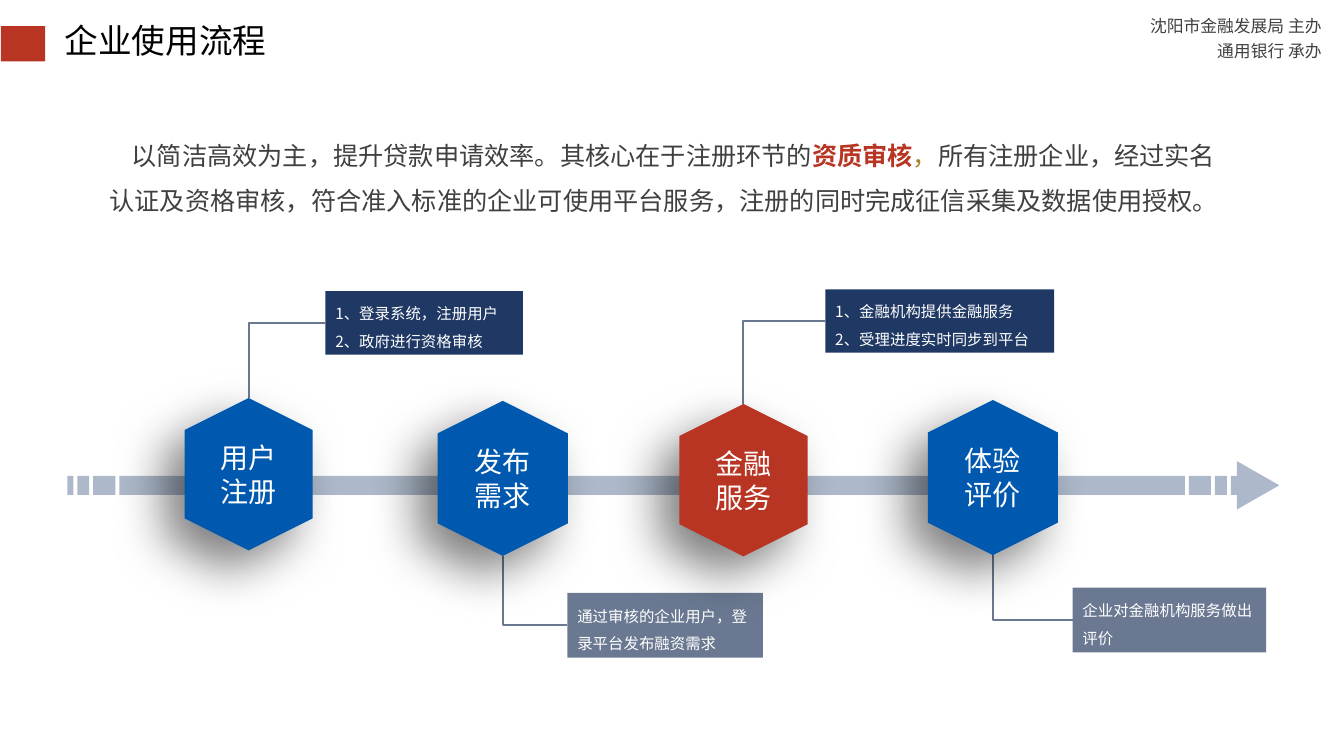
from dataclasses import dataclass

from lxml import etree
from pptx import Presentation
from pptx import util as u
from pptx.dml.color import RGBColor
from pptx.enum import shapes, text
from pptx.oxml.ns import qn


@dataclass(frozen=True)
class Theme:
    font: str = "Noto Sans CJK SC"
    red: str = "B83523"
    blue: str = "0059AF"
    navy: str = "1F3864"
    slate: str = "6A7991"
    pale: str = "ADB9CA"
    gold: str = "AC7E2B"
    ink: str = "404040"
    black: str = "000000"
    white: str = "FFFFFF"
    title: int = 24
    step: int = 20
    body: int = 18
    host: int = 12
    note: int = 11


@dataclass(frozen=True)
class Box:
    """A rectangle in centimetres."""
    left: float
    top: float
    width: float
    height: float

    def lengths(self):
        return [u.Cm(n) for n in (self.left, self.top, self.width, self.height)]

    def inner(self, left, top, width, height):
        return Box(self.left + left, self.top + top, width, height)

    @property
    def middle(self):
        return self.top + self.height / 2


THEME = Theme()
KINDS = shapes.MSO_SHAPE
ALIGN = text.PP_ALIGN
ANCHOR = text.MSO_ANCHOR


# Shared building parts
def add_block(parent, kind, box, color):
    shape = parent.shapes.add_shape(kind, *box.lengths())
    shape.shadow.inherit = False
    shape.fill.solid()
    shape.fill.fore_color.rgb = RGBColor.from_string(color)
    shape.line.fill.background()
    return shape


def style_para(para, size, color, align=ALIGN.LEFT, spacing=1.0):
    para.alignment = align
    para.line_spacing = spacing
    para.font.size = u.Pt(size)
    para.font.color.rgb = RGBColor.from_string(color)
    para.font.name = THEME.font
    latin = para._p.pPr.find(qn("a:defRPr")).find(qn("a:latin"))
    east_asian = etree.Element(qn("a:ea"), typeface=THEME.font)
    latin.addnext(east_asian)


def write(shape, lines, size, color, align=ALIGN.LEFT, spacing=1.0, anchor=ANCHOR.MIDDLE):
    frame = shape.text_frame
    frame.word_wrap = True
    frame.vertical_anchor = anchor
    for index, line in enumerate(lines):
        para = frame.add_paragraph() if index else frame.paragraphs[0]
        para.text = line
        style_para(para, size, color, align, spacing)
    return frame


# Title, red marker and hosts
def add_header(page, box):
    add_block(page, KINDS.RECTANGLE, box.inner(0.02, 0.66, 1.12, 0.89), THEME.red)
    title = page.shapes.add_textbox(*box.inner(1.63, 0.61, 6.43, 0.91).lengths())
    frame = write(title, ["企业使用流程"], THEME.title, THEME.black, spacing=0.9)
    frame.margin_left = frame.margin_right = frame.margin_top = frame.margin_bottom = 0
    for row, host in enumerate(["沈阳市金融发展局 主办", "通用银行 承办"]):
        place = box.inner(box.width - 5.75, 0.23 + 0.64 * row, 5.44, 0.9)
        label = page.shapes.add_textbox(*place.lengths())
        write(label, [host], THEME.host, THEME.ink, ALIGN.RIGHT, 0.9)


# Introductory paragraph
def add_intro(page, box):
    frame = page.shapes.add_textbox(*box.lengths()).text_frame
    frame.word_wrap = True
    para = frame.paragraphs[0]
    style_para(para, THEME.body, THEME.ink, spacing=1.5)
    para._p.pPr.set("indent", str(u.Cm(0.56)))
    spans = [
        ("以简洁高效为主，提升贷款申请效率。其核心在于注册环节的", None, False),
        ("资质审核", THEME.red, True),
        ("，", THEME.gold, False),
        ("所有注册企业，经过实名认证及资格审核，符合准入标准的企业可使用平台服务，"
         "注册的同时完成征信采集及数据使用授权。", None, False),
    ]
    for words, color, bold in spans:
        span = para.add_run()
        span.text = words
        if color:
            span.font.color.rgb = RGBColor.from_string(color)
        if bold:
            span.font.bold = True


# Broken bar with an arrowhead
def add_timeline(page, box):
    group = page.shapes.add_group_shape()
    dashes, gap, head = [0.15, 0.3, 0.56], 0.1, 1.07
    long_bar = box.width - head - 2 * sum(dashes) - 6 * gap
    left = 0
    for width in dashes + [long_bar] + dashes[::-1]:
        add_block(group, KINDS.RECTANGLE, box.inner(left, 0, width, box.height), THEME.pale)
        left += width + gap
    span = 1.22
    place = box.inner(box.width - (head + span) / 2, (box.height - head) / 2, span, head)
    add_block(group, KINDS.ISOSCELES_TRIANGLE, place, THEME.pale).rotation = 90


def add_hexagon(group, box, label, color):
    # The preset lies on its side, so it is turned and its text is turned back
    place = box.inner((box.width - box.height) / 2, (box.height - box.width) / 2,
                      box.height, box.width)
    hexagon = add_block(group, KINDS.HEXAGON, place, color)
    hexagon.rotation = 90
    frame = write(hexagon, [label], THEME.step, THEME.white, ALIGN.CENTER)
    frame._txBody.find(qn("a:bodyPr")).set("vert", "vert270")
    effects = hexagon._element.spPr.find(qn("a:effectLst"))
    shadow = etree.SubElement(effects, qn("a:outerShdw"), blurRad=str(u.Pt(35)),
                              dist=str(u.Pt(20)), dir="8100000", algn="ctr", rotWithShape="0")
    tint = etree.SubElement(shadow, qn("a:srgbClr"), val=THEME.black)
    etree.SubElement(tint, qn("a:alpha"), val="50000")


def add_elbow(group, start, end):
    ends = [u.Cm(n) for n in start + end]
    elbow = group.shapes.add_connector(shapes.MSO_CONNECTOR.ELBOW, *ends)
    elbow.line.color.rgb = RGBColor.from_string(THEME.slate)
    elbow.line.width = u.Pt(1.5)
    properties = elbow._element.spPr
    properties.find(qn("a:prstGeom")).set("prst", "bentConnector2")
    etree.SubElement(properties, qn("a:effectLst"))


# One step: hexagon, elbow line and note card
def add_step(page, box, label, color, card, notes):
    group = page.shapes.add_group_shape()
    above = card.top < box.top
    tip = box.top if above else box.top + box.height
    add_elbow(group, (card.left, card.middle), (box.left + box.width / 2, tip))
    add_hexagon(group, box, label, color)
    note = add_block(group, KINDS.RECTANGLE, card, THEME.navy if above else THEME.slate)
    write(note, notes, THEME.note, THEME.white, spacing=1.5)


def main():
    deck = Presentation()
    deck.slide_width, deck.slide_height = u.Cm(33.87), u.Cm(19.05)
    page = deck.slides.add_slide(deck.slide_layouts[6])
    add_header(page, Box(0, 0, 33.87, 2))
    add_intro(page, Box(2.51, 3.02, 28.65, 2.44))
    add_timeline(page, Box(1.7, 11.99, 30.54, 0.48))
    steps = [
        (Box(4.65, 10.03, 3.23, 3.84), "用户注册", THEME.blue, Box(8.2, 7.34, 4.98, 1.6),
         ["1、登录系统，注册用户", "2、政府进行资格审核"]),
        (Box(11.03, 10.1, 3.28, 3.91), "发布需求", THEME.blue, Box(14.3, 14.94, 4.93, 1.63),
         ["通过审核的企业用户，登录平台发布融资需求"]),
        (Box(17.12, 10.18, 3.23, 3.84), "金融服务", THEME.red, Box(20.8, 7.29, 5.77, 1.6),
         ["1、金融机构提供金融服务", "2、受理进度实时同步到平台"]),
        (Box(23.38, 10.08, 3.28, 3.91), "体验评价", THEME.blue, Box(27.03, 14.81, 4.88, 1.63),
         ["企业对金融机构服务做出评价"]),
    ]
    for step in steps:
        add_step(page, *step)
    deck.save("out.pptx")


if __name__ == "__main__":
    main()
